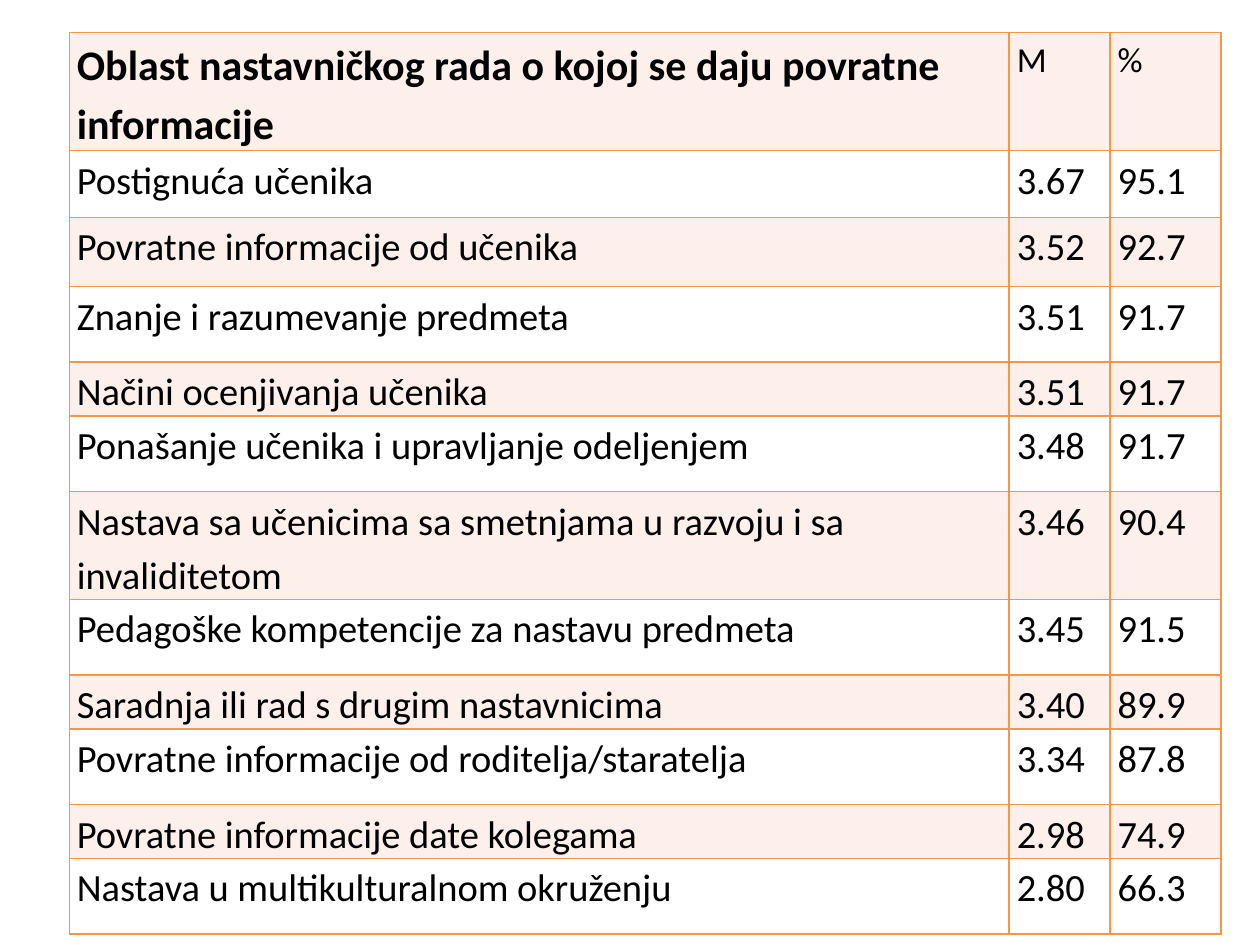
import lxml.etree
import pptx
import pptx.dml.color
import pptx.oxml.ns
import pptx.util

Inches = pptx.util.Inches
Pt = pptx.util.Pt


def color(value):
    return pptx.dml.color.RGBColor.from_string(value)


def add_borders(cell, value, width):
    properties = cell._tc.get_or_add_tcPr()
    for side in ("lnL", "lnR", "lnT", "lnB"):
        line = lxml.etree.SubElement(properties, pptx.oxml.ns.qn(f"a:{side}"), w=str(width))
        fill = lxml.etree.SubElement(line, pptx.oxml.ns.qn("a:solidFill"))
        lxml.etree.SubElement(fill, pptx.oxml.ns.qn("a:srgbClr"), val=value)


presentation = pptx.Presentation()
presentation.slide_width = Inches(10)
presentation.slide_height = Inches(7.5)
slide = presentation.slides.add_slide(presentation.slide_layouts[6])

feedback_areas = [
    ("Oblast nastavničkog rada o kojoj se daju povratne informacije", "M", "%"),
    ("Postignuća učenika", "3.67", "95.1"),
    ("Povratne informacije od učenika", "3.52", "92.7"),
    ("Znanje i razumevanje predmeta", "3.51", "91.7"),
    ("Načini ocenjivanja učenika", "3.51", "91.7"),
    ("Ponašanje učenika i upravljanje odeljenjem", "3.48", "91.7"),
    ("Nastava sa učenicima sa smetnjama u razvoju i sa invaliditetom", "3.46", "90.4"),
    ("Pedagoške kompetencije za nastavu predmeta", "3.45", "91.5"),
    ("Saradnja ili rad s drugim nastavnicima", "3.40", "89.9"),
    ("Povratne informacije od roditelja/staratelja", "3.34", "87.8"),
    ("Povratne informacije date kolegama", "2.98", "74.9"),
    ("Nastava u multikulturalnom okruženju", "2.80", "66.3"),
]
column_widths = [7.46, 0.8, 0.88]
row_heights = [0.9, 0.53, 0.55, 0.6, 0.41, 0.6, 0.82, 0.6, 0.41, 0.6, 0.41, 0.6]
band_fills = ["FDEFE9", "FFFFFF"]
cell_margins = {
    "margin_left": Inches(0.06),
    "margin_right": Inches(0.06),
    "margin_top": 0,
    "margin_bottom": 0,
}
area_heading_font = {"name": "Calibri", "size": Pt(24), "bold": True}
value_heading_font = {"name": "Calibri", "size": Pt(20), "bold": False}
body_font = {"name": "Calibri", "size": Pt(22), "bold": False}

feedback = slide.shapes.add_table(
    len(feedback_areas), len(column_widths), Inches(0.55), Inches(0.26),
    Inches(sum(column_widths)), Inches(sum(row_heights)),
).table
feedback.first_row = False
feedback.horz_banding = False
for column, width in zip(feedback.columns, column_widths):
    column.width = Inches(width)
for row, height in zip(feedback.rows, row_heights):
    row.height = Inches(height)

for row_index, area in enumerate(feedback_areas):
    for column_index, wording in enumerate(area):
        cell = feedback.cell(row_index, column_index)
        for attribute, value in cell_margins.items():
            setattr(cell, attribute, value)
        add_borders(cell, "F79646", Pt(1))
        cell.fill.solid()
        cell.fill.fore_color.rgb = color(band_fills[row_index % 2])

        paragraph = cell.text_frame.paragraphs[0]
        paragraph.line_spacing = 1.15
        run = paragraph.add_run()
        run.text = wording
        if row_index > 0:
            font_format = body_font
        elif column_index == 0:
            font_format = area_heading_font
        else:
            font_format = value_heading_font
        for attribute, value in font_format.items():
            setattr(run.font, attribute, value)
        run.font.color.rgb = color("000000")

presentation.save("out.pptx")
